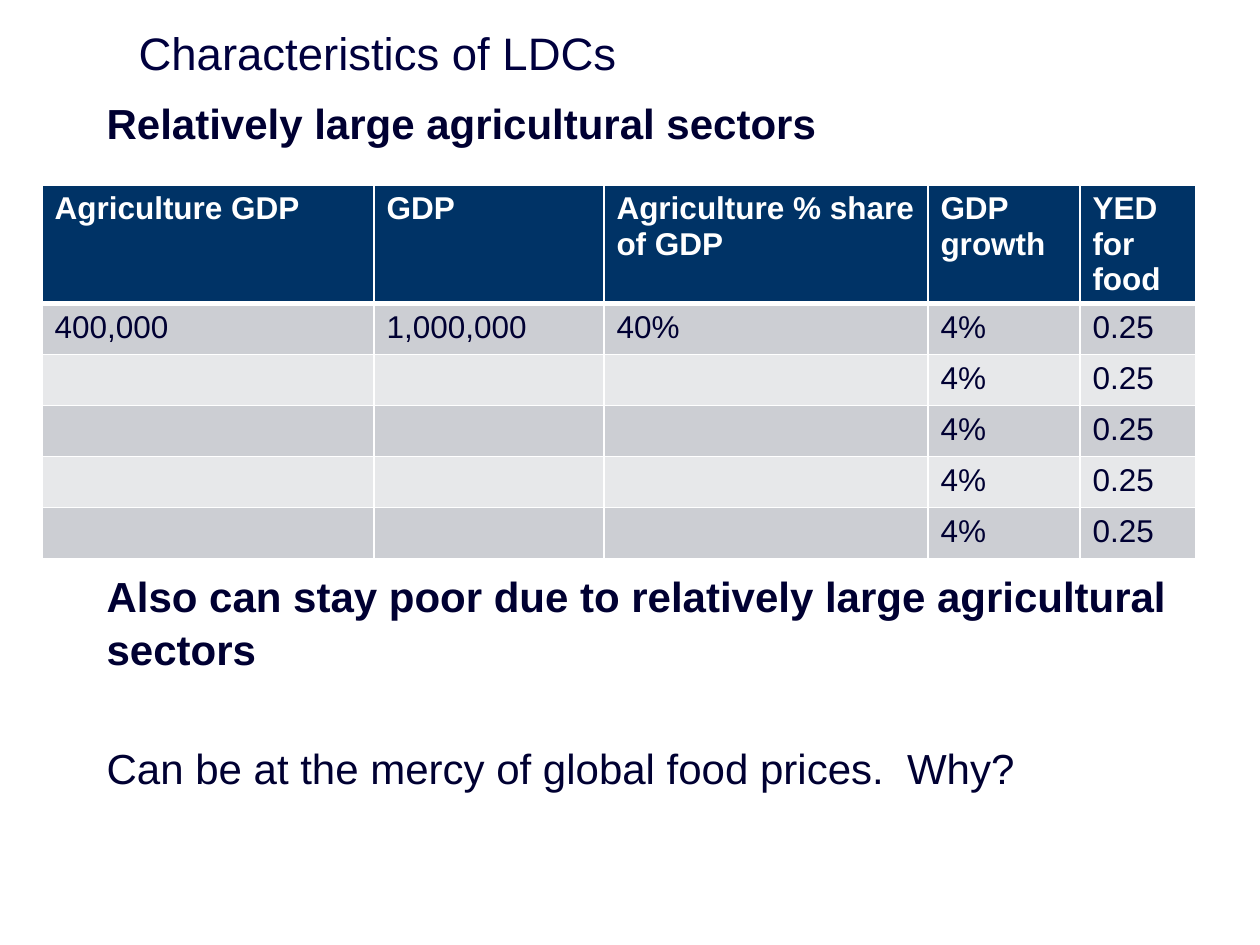
from lxml import etree
from pptx import Presentation
from pptx.dml.color import RGBColor
from pptx.enum.text import MSO_ANCHOR, MSO_AUTO_SIZE, PP_ALIGN
from pptx.oxml.ns import qn
from pptx.util import Emu, Pt

LEFT = PP_ALIGN.LEFT
TOP, MIDDLE = MSO_ANCHOR.TOP, MSO_ANCHOR.MIDDLE
NO_FIT = MSO_AUTO_SIZE.NONE

TITLE = "Characteristics of LDCs"
# text, bold, space before in points
POINTS = [
    ("Relatively large agricultural sectors", True, 0),
    ("Also can stay poor due to relatively large agricultural sectors", True, 240),
    ("Can be at the mercy of global food prices.  Why?", False, 38),
]
HEADINGS = ["Agriculture GDP", "GDP", "Agriculture % share of GDP",
            "GDP growth", "YED for food"]
YEARS = [["400,000", "1,000,000", "40%", "4%", "0.25"]]
YEARS += [["", "", "", "4%", "0.25"]] * 4

TITLE_BOX = (126, 20, 1134, 64)
BODY_BOX = (94, 89, 1113, 624)
TABLE_LEFT, TABLE_TOP = 42, 185
COLUMN_WIDTHS = [332, 230, 324, 152, 116]
ROW_HEIGHTS = [117] + [51] * len(YEARS)

TITLE_INK, INK, WHITE = "00003E", "000032", "FFFFFF"
HEADER_FILL = "003366"
BAND_FILLS = ["CCCED3", "E7E8EA"]


def px(length):
    return Emu(round(length * 914400 / 126))


def color(value):
    return RGBColor.from_string(value)


def write(paragraph, text, size, ink, bold=False, before=0, spacing=None):
    paragraph.alignment = LEFT
    paragraph.space_before = Pt(before)
    paragraph.line_spacing = spacing
    paragraph.font.size = Pt(size)
    if text:
        run = paragraph.add_run()
        run.text = text
        run.font.name = "Arial"
        run.font.size = Pt(size)
        run.font.bold = bold
        run.font.color.rgb = color(ink)


def place(placeholder, box, anchor):
    placeholder.left, placeholder.top, placeholder.width, placeholder.height = map(px, box)
    frame = placeholder.text_frame
    frame.word_wrap = True
    frame.auto_size = NO_FIT
    frame.vertical_anchor = anchor
    return frame


def remove_bullet(paragraph):
    properties = paragraph._p.get_or_add_pPr()
    properties.set("marL", "0")
    properties.set("indent", "0")
    etree.SubElement(properties, qn("a:buNone"))


def add_borders(cell, widths):
    """Draw white cell borders, given a width in points for each side."""
    properties = cell._tc.get_or_add_tcPr()
    for position, (side, width) in enumerate(widths.items()):
        line = etree.Element(qn(f"a:ln{side}"), w=str(Pt(width)))
        fill = etree.SubElement(line, qn("a:solidFill"))
        etree.SubElement(fill, qn("a:srgbClr"), val=WHITE)
        properties.insert(position, line)


def add_gdp_table(slide):
    rows = [HEADINGS] + YEARS
    table = slide.shapes.add_table(
        len(rows), len(HEADINGS), px(TABLE_LEFT), px(TABLE_TOP),
        px(sum(COLUMN_WIDTHS)), px(sum(ROW_HEIGHTS))).table
    for column, width in zip(table.columns, COLUMN_WIDTHS):
        column.width = px(width)
    for r, (row, height) in enumerate(zip(rows, ROW_HEIGHTS)):
        table.rows[r].height = px(height)
        header = r == 0
        for c, value in enumerate(row):
            cell = table.cell(r, c)
            cell.fill.solid()
            cell.fill.fore_color.rgb = color(HEADER_FILL if header else BAND_FILLS[(r - 1) % 2])
            add_borders(cell, {"L": 1, "R": 1, "T": 3 if r == 1 else 1, "B": 3 if header else 1})
            write(cell.text_frame.paragraphs[0], value, 18,
                  WHITE if header else INK, bold=header)


def main():
    deck = Presentation()
    deck.slide_width, deck.slide_height = px(1260), px(945)
    slide = deck.slides.add_slide(deck.slide_layouts[1])

    title = place(slide.shapes.title, TITLE_BOX, MIDDLE)
    write(title.paragraphs[0], TITLE, 26, TITLE_INK)

    body = place(slide.placeholders[1], BODY_BOX, TOP)
    for i, (text, bold, before) in enumerate(POINTS):
        paragraph = body.add_paragraph() if i else body.paragraphs[0]
        remove_bullet(paragraph)
        write(paragraph, text, 24, INK, bold, before, spacing=1.05)

    add_gdp_table(slide)
    deck.save("out.pptx")


if __name__ == "__main__":
    main()
